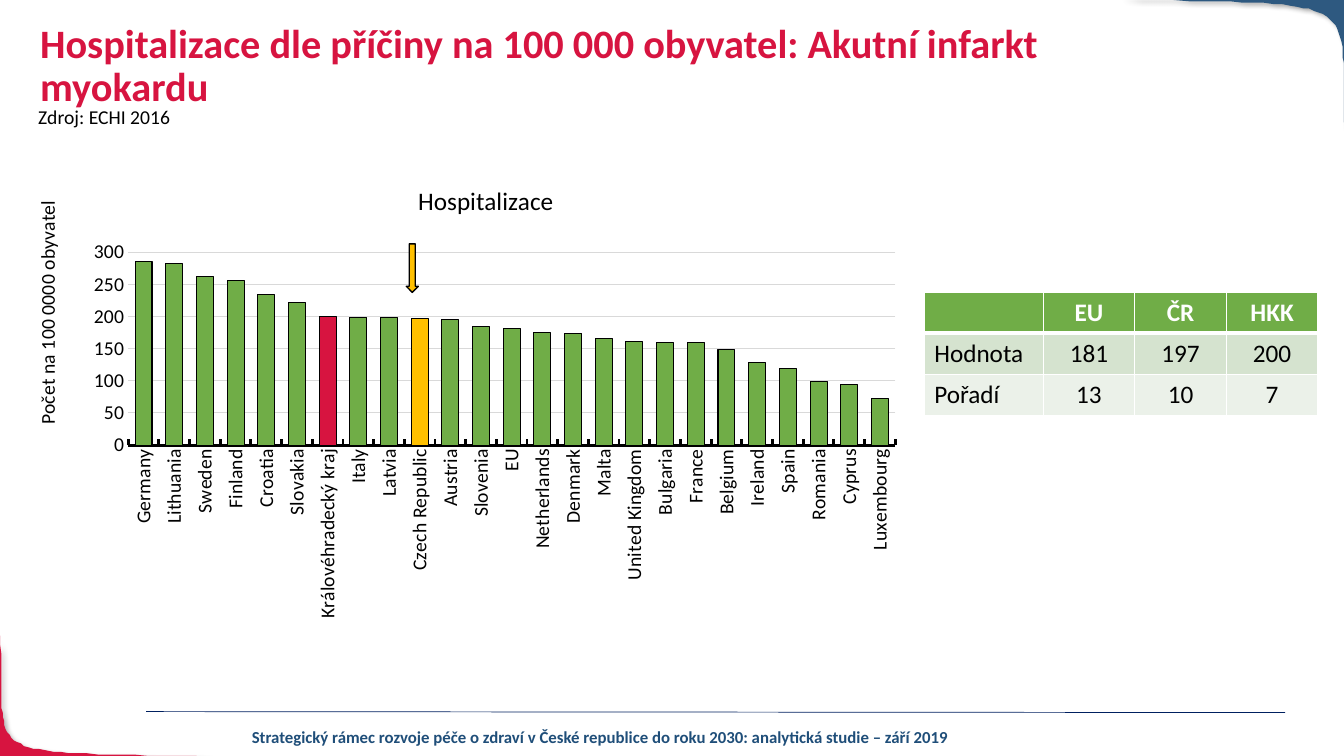
from lxml import etree
from pptx import Presentation
from pptx import oxml
from pptx import util as u
from pptx.chart.data import CategoryChartData
from pptx.dml.color import RGBColor
from pptx.enum import chart as ch
from pptx.enum import shapes, text
from pptx.oxml.ns import nsdecls, qn

Pt = u.Pt
HEX = {"red": "D71440", "blue": "2E5980", "navy": "002060", "foot": "1F4E79",
       "black": "000000", "white": "FFFFFF", "green": "70AD47", "gold": "FFC000",
       "grid": "D9D9D9", "mid": "D5E3CF", "pale": "EBF1E9"}
RATES = {
    "Germany": 285, "Lithuania": 282, "Sweden": 262, "Finland": 256, "Croatia": 234,
    "Slovakia": 221, "Královéhradecký kraj": 200, "Italy": 199, "Latvia": 198,
    "Czech Republic": 197, "Austria": 195, "Slovenia": 185, "EU": 181,
    "Netherlands": 175, "Denmark": 174, "Malta": 165, "United Kingdom": 161,
    "Bulgaria": 159, "France": 159, "Belgium": 148, "Ireland": 128, "Spain": 119,
    "Romania": 99, "Cyprus": 94, "Luxembourg": 73}
MARKED = {"Královéhradecký kraj": "red", "Czech Republic": "gold"}
RANKS = [["", "EU", "ČR", "HKK"],
         ["Hodnota", "181", "197", "200"],
         ["Pořadí", "13", "10", "7"]]


def rgb(name):
    return RGBColor.from_string(HEX[name])


def paint(item, fill, line=None, width=1):
    item.fill.solid()
    item.fill.fore_color.rgb = rgb(fill)
    if line:
        item.line.color.rgb = rgb(line)
        item.line.width = Pt(width)
    else:
        item.line.fill.background()


def style(font, size, color="black", bold=False):
    font.name, font.size, font.bold = "Calibri", Pt(size), bold
    font.color.rgb = rgb(color)


def label(slide, words, box, size, color="black", bold=False, align="LEFT", wrap=True, pitch=None):
    frame = slide.shapes.add_textbox(*map(Pt, box)).text_frame
    frame.word_wrap = wrap
    para = frame.paragraphs[0]
    para.text = words
    para.alignment = getattr(text.PP_ALIGN, align)
    para.line_spacing = pitch
    style(para.font, size, color, bold)


def corner(slide, color, start, grip1, grip2, end, tip):
    """Draw a page corner whose inner edge is a cubic curve from start to end."""
    steps = 40
    curve = []
    for i in range(1, steps + 1):
        t = i / steps
        parts = ((1 - t) ** 3, 3 * t * (1 - t) ** 2, 3 * t * t * (1 - t), t ** 3)
        curve.append(tuple(sum(k * p[axis] for k, p in zip(parts, (start, grip1, grip2, end)))
                           for axis in (0, 1)))
    pen = slide.shapes.build_freeform(*start, scale=float(Pt(1)))
    pen.add_line_segments(curve + [tip], close=True)
    shape = pen.convert_to_shape()
    paint(shape, color)
    shape.shadow.inherit = False
    glow = shape.element.spPr.find(qn("a:effectLst"))
    glow.append(oxml.parse_xml(
        f'<a:outerShdw {nsdecls("a")} blurRad="{Pt(4)}" dist="{Pt(3)}" dir="2700000" '
        f'algn="tl" rotWithShape="0"><a:srgbClr val="{HEX["black"]}">'
        '<a:alpha val="40000"/></a:srgbClr></a:outerShdw>'))


def rule(slide, ends):
    line = slide.shapes.add_connector(shapes.MSO_CONNECTOR.STRAIGHT, *map(Pt, ends))
    line.line.color.rgb = rgb("navy")
    line.line.width = Pt(0.5)
    etree.SubElement(line.element.spPr, qn("a:effectLst"))


def place(node, index, inner=False, **spots):
    """Give a chart part a manual layout, in shares of the chart."""
    for old in node.findall(qn("c:layout")):
        node.remove(old)
    body = '<c:layoutTarget val="inner"/>' if inner else ""
    body += '<c:xMode val="edge"/><c:yMode val="edge"/>'
    body += "".join(f'<c:{key} val="{val}"/>' for key, val in spots.items())
    node.insert(index, oxml.parse_xml(
        f'<c:layout {nsdecls("c")}><c:manualLayout>{body}</c:manualLayout></c:layout>'))


def entitle(title, words, size, x, y):
    frame = title.text_frame
    frame.text = words
    style(frame.paragraphs[0].font, size)
    place(title.element, 1, x=x, y=y)


def bars(slide, box):
    data = CategoryChartData(number_format="#,##0")
    data.categories = list(RATES)
    data.add_series("Series 1", list(RATES.values()))
    chart = slide.shapes.add_chart(ch.XL_CHART_TYPE.COLUMN_CLUSTERED, *map(Pt, box), data).chart
    chart.has_legend = False
    style(chart.font, 10)
    chart.has_title = True
    entitle(chart.chart_title, "Hospitalizace", 18, 0.44, 0.02)
    place(chart.element.chart.plotArea, 0, True, x=0.12, y=0.18, w=0.86, h=0.42)

    plot = chart.plots[0]
    plot.gap_width, plot.overlap, plot.vary_by_categories = 81, -27, False
    series = plot.series[0]
    series.invert_if_negative = False
    paint(series.format, "green", "black", 0.75)
    for i, name in enumerate(RATES):
        if name in MARKED:
            paint(series.points[i].format, MARKED[name], "black", 0.75)

    cats, vals = chart.category_axis, chart.value_axis
    for axis in (cats, vals):
        style(axis.tick_labels.font, 14)
        axis.minor_tick_mark = ch.XL_TICK_MARK.NONE
    cats.major_tick_mark = ch.XL_TICK_MARK.INSIDE
    cats.format.line.color.rgb = rgb("black")
    cats.format.line.width = Pt(2)
    vals.major_tick_mark = ch.XL_TICK_MARK.NONE
    vals.format.line.fill.background()
    vals.minimum_scale, vals.maximum_scale, vals.major_unit = 0, 300, 50
    vals.tick_labels.number_format = "#,##0"
    vals.tick_labels.number_format_is_linked = False
    vals.major_gridlines.format.line.color.rgb = rgb("grid")
    vals.major_gridlines.format.line.width = Pt(0.75)
    vals.has_title = True
    entitle(vals.axis_title, "Počet na 100 0000 obyvatel", 14, 0.01, 0.06)
    for body in chart.element.xpath(".//c:catAx/c:txPr/a:bodyPr | .//c:valAx/c:title//a:bodyPr"):
        body.set("rot", "-5400000")
        body.set("vert", "horz")


def edge(cell, head):
    """Add white borders, with a thick one below the head row."""
    props = cell._tc.get_or_add_tcPr()
    for i, side in enumerate("LRTB"):
        width = Pt(3 if head and side == "B" else 1)
        props.insert(i, oxml.parse_xml(
            f'<a:ln{side} {nsdecls("a")} w="{width}"><a:solidFill>'
            f'<a:srgbClr val="{HEX["white"]}"/></a:solidFill></a:ln{side}>'))


def grid(slide, left, top, widths, height):
    box = (left, top, sum(widths), height * len(RANKS))
    table = slide.shapes.add_table(len(RANKS), len(widths), *map(Pt, box)).table
    for col, width in zip(table.columns, widths):
        col.width = Pt(width)
    for r, (row, fill) in enumerate(zip(RANKS, ("green", "mid", "pale"))):
        table.rows[r].height = Pt(height)
        for c, words in enumerate(row):
            cell = table.cell(r, c)
            cell.fill.solid()
            cell.fill.fore_color.rgb = rgb(fill)
            edge(cell, r == 0)
            para = cell.text_frame.paragraphs[0]
            para.text = words
            para.alignment = text.PP_ALIGN.CENTER if c else text.PP_ALIGN.LEFT
            style(para.font, 18, "black" if r else "white", r == 0)


def arrow(slide, box):
    shape = slide.shapes.add_shape(shapes.MSO_SHAPE.DOWN_ARROW, *map(Pt, box))
    paint(shape, "gold", "black")
    shape.shadow.inherit = False


def main():
    deck = Presentation()
    deck.slide_width, deck.slide_height = Pt(960), Pt(540)
    slide = deck.slides.add_slide(deck.slide_layouts[6])
    corner(slide, "red", (153.4, 540.7), (-24.5, 535.7), (5.8, 546.5), (0, 453.6), (-0.7, 540.7))
    corner(slide, "blue", (800, -0.7), (986.4, 5), (954.7, -7.2), (961.2, 102.2), (961.2, -0.7))
    rule(slide, (104.4, 508.3, 918, 509))
    label(slide, "Strategický rámec rozvoje péče o zdraví v České republice do roku 2030: "
          "analytická studie – září 2019", (137.5, 515.5, 582.5, 21.6), 12, "foot", True, "CENTER")
    label(slide, "Zdroj: ECHI 2016", (20.2, 71.3, 109.4, 24.5), 14, wrap=False)
    label(slide, "Hospitalizace dle příčiny na 100 000 obyvatel: Akutní infarkt myokardu",
          (21.6, 13, 795.6, 49.7), 28.8, "red", True, pitch=0.9)
    bars(slide, (15.1, 121, 637.2, 328.3))
    arrow(slide, (290.2, 174.2, 8.6, 34.6))
    grid(slide, 660.2, 208.8, (85, 65.4, 65.4, 65.4), 29.3)
    deck.save("out.pptx")


if __name__ == "__main__":
    main()
